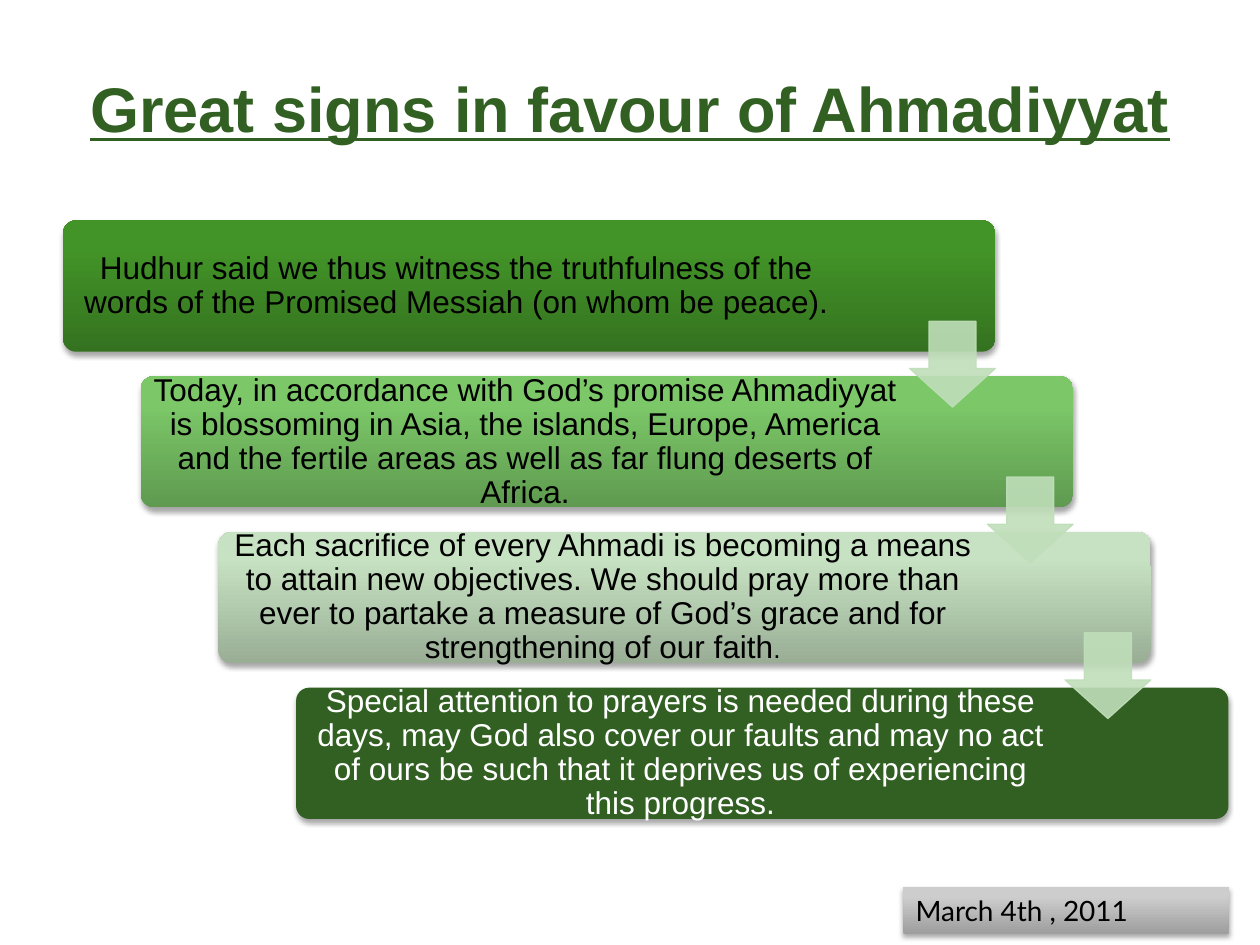
"""Build the slide of four stepped message boxes joined by arrows."""
from lxml import etree
from pptx import Presentation
from pptx.dml.color import RGBColor
from pptx.enum.shapes import MSO_SHAPE as SHAPE
from pptx.enum.text import MSO_ANCHOR as ANCHOR, PP_ALIGN as ALIGN
from pptx.oxml import parse_xml
from pptx.oxml.ns import qn
from pptx.util import Pt

NS = 'xmlns:a="http://schemas.openxmlformats.org/drawingml/2006/main"'
BLACK = RGBColor(0x00, 0x00, 0x00)
WHITE = RGBColor(0xFF, 0xFF, 0xFF)
GREEN = RGBColor(0x32, 0x60, 0x23)
PALE = RGBColor(0xBF, 0xDE, 0xB9)
DEEP_RAMP = [RGBColor(0x34, 0x72, 0x1F), RGBColor(0x43, 0x94, 0x28), RGBColor(0x42, 0x97, 0x26)]
MID_RAMP = [RGBColor(0x5F, 0x9A, 0x50), RGBColor(0x7C, 0xC8, 0x68), RGBColor(0x7B, 0xCA, 0x67)]
LIGHT_RAMP = [RGBColor(0x99, 0xAE, 0x95), RGBColor(0xC7, 0xE2, 0xC2), RGBColor(0xC8, 0xE3, 0xC2)]
GREY_RAMP = [RGBColor(0x9E, 0x9E, 0x9E), RGBColor(0xCD, 0xCD, 0xCD), RGBColor(0xCE, 0xCE, 0xCE)]
STEP_X, STEP_Y = 44.4, 89

STEPS = [
    (DEEP_RAMP, BLACK, 445, [("Hudhur said we thus witness the truthfulness of the words of the "
                              "Promised Messiah (on whom be peace).", 18)]),
    (MID_RAMP, BLACK, 435, [("Today, in accordance with God’s promise Ahmadiyyat is blossoming in "
                             "Asia, the islands, Europe, America and the fertile areas as well as "
                             "far flung deserts of Africa.", 18)]),
    (LIGHT_RAMP, BLACK, 435, [("Each sacrifice of every Ahmadi is becoming a means to attain new "
                               "objectives. We should pray more than ever to partake a measure of "
                               "God’s grace and for strengthening of our faith", 18), (".", 15)]),
    ([GREEN], WHITE, 435, [("Special attention to prayers is needed during these days, may God also "
                            "cover our faults and may no act of ours be such that it deprives us "
                            "of experiencing this progress.", 18)]),
]


def add_panel(shapes, kind, x, y, w, h, ramp):
    s = shapes.add_shape(kind, Pt(x), Pt(y), Pt(w), Pt(h))
    s.line.fill.background()
    if len(ramp) == 1:
        s.fill.solid()
        s.fill.fore_color.rgb = ramp[0]
    else:
        stops = "".join(f'<a:gs pos="{pos}"><a:srgbClr val="{color}"/></a:gs>'
                        for pos, color in zip((0, 80000, 100000), ramp))
        s.fill.background()
        no_fill = s._element.spPr.find(qn("a:noFill"))
        s._element.spPr.replace(no_fill, parse_xml(
            f'<a:gradFill {NS} rotWithShape="1"><a:gsLst>{stops}</a:gsLst>'
            '<a:lin ang="16200000" scaled="0"/></a:gradFill>'))
    s._element.spPr.append(parse_xml(
        f'<a:effectLst {NS}><a:outerShdw blurRad="{Pt(3.1)}" dist="{Pt(1.8)}" dir="5400000" '
        f'rotWithShape="0"><a:srgbClr val="{BLACK}"><a:alpha val="35000"/></a:srgbClr>'
        '</a:outerShdw></a:effectLst>'))
    return s


def write(s, runs, color, font="Arial", align=ALIGN.CENTER, **frame):
    tf = s.text_frame
    for name, value in {"word_wrap": True, "vertical_anchor": ANCHOR.MIDDLE, **frame}.items():
        setattr(tf, name, value)
    p = tf.paragraphs[0]
    p.alignment = align
    for text, size in runs:
        r = p.add_run()
        r.text = text
        r.font.color.rgb = color
        for name, value in {"name": font, "size": Pt(size)}.items():
            setattr(r.font, name, value)
    return p


prs = Presentation()
prs.slide_width, prs.slide_height = Pt(720), Pt(540)
shapes = prs.slides.add_slide(prs.slide_layouts[6]).shapes

sp = shapes.add_textbox(Pt(36), Pt(36), Pt(648), Pt(72))
p = write(sp, [("Great signs in favour of Ahmadiyyat", 36)], GREEN, vertical_anchor=ANCHOR.TOP,
          margin_left=0, margin_right=0, margin_top=Pt(4), margin_bottom=0)
for name, value in {"bold": True, "underline": True}.items():
    setattr(p.runs[0].font, name, value)

inset = {f"margin_{side}": Pt(5) for side in ("left", "right", "top", "bottom")}
for i, (ramp, color, width, runs) in enumerate(STEPS):
    x, y = 36 + i * STEP_X, 126 + i * STEP_Y
    s = add_panel(shapes, SHAPE.ROUNDED_RECTANGLE, x, y, 532.8, 75, ramp)
    s.adjustments[0] = 0.1
    sp = shapes.add_textbox(Pt(x + 2.2), Pt(y + 2.2), Pt(width), Pt(70.6))
    p = write(sp, runs, color, **inset)
    p.line_spacing = 0.9

for i in range(len(STEPS) - 1):
    s = shapes.add_shape(SHAPE.DOWN_ARROW, Pt(519.8 + i * STEP_X), Pt(183.6 + i * STEP_Y),
                         Pt(49), Pt(49))
    s.adjustments[0], s.adjustments[1] = 0.55, 0.45
    s.shadow.inherit = False
    s.line.width = Pt(0.75)
    for fill in (s.fill, s.line.fill):
        fill.solid()
        fill.fore_color.rgb = PALE
    for clr in s._element.spPr.iter(qn("a:srgbClr")):
        etree.SubElement(clr, qn("a:alpha"), val="90000")

s = add_panel(shapes, SHAPE.RECTANGLE, 516.2, 507, 186, 26.6, GREY_RAMP)
write(s, [("March 4th , 2011", 16)], BLACK, "Lato", ALIGN.LEFT)

prs.save("out.pptx")
